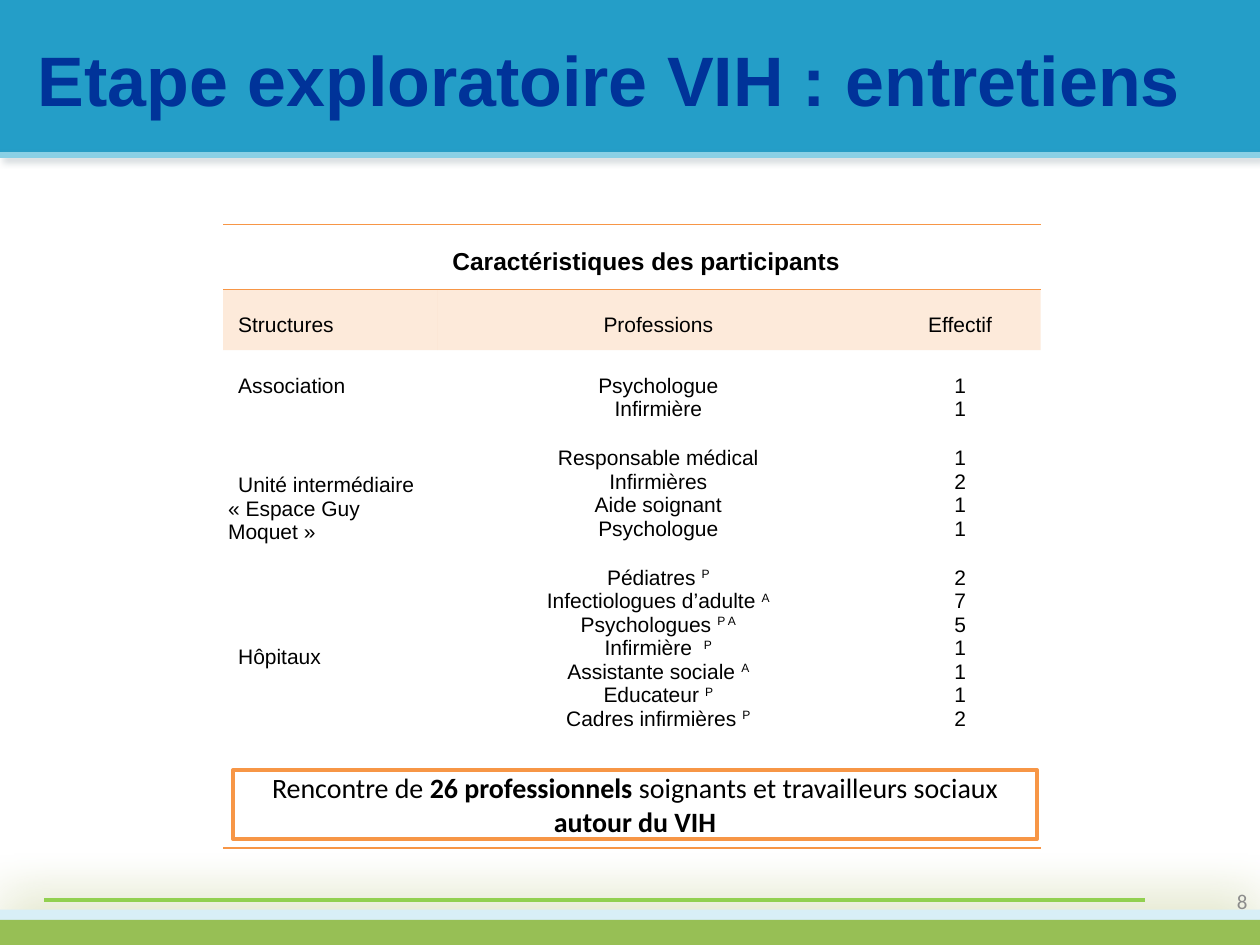
from lxml import etree
from pptx import Presentation
from pptx.dml.color import RGBColor
from pptx.enum.shapes import MSO_CONNECTOR, MSO_SHAPE
from pptx.enum.text import MSO_ANCHOR, PP_ALIGN
from pptx.oxml.ns import qn
from pptx.util import Inches, Pt

RECTANGLE = MSO_SHAPE.RECTANGLE
STRAIGHT = MSO_CONNECTOR.STRAIGHT
MIDDLE = MSO_ANCHOR.MIDDLE
LEFT, CENTER, RIGHT = PP_ALIGN.LEFT, PP_ALIGN.CENTER, PP_ALIGN.RIGHT

BLACK = RGBColor(0x00, 0x00, 0x00)
WHITE = RGBColor(0xFF, 0xFF, 0xFF)
NAVY = RGBColor(0x00, 0x33, 0x99)
BLUE = RGBColor(0x24, 0x9E, 0xC8)
LIGHT_BLUE = RGBColor(0x8A, 0xD0, 0xE5)
PALE_BLUE = RGBColor(0xD8, 0xEF, 0xF7)
GREEN = RGBColor(0x97, 0xBF, 0x55)
BRIGHT_GREEN = RGBColor(0x92, 0xD0, 0x50)
ORANGE = RGBColor(0xF7, 0x96, 0x46)
GREY = RGBColor(0x8C, 0x8C, 0x8C)
GREY_SHADOW = RGBColor(0x82, 0x92, 0x9B)
OLIVE_SHADOW = RGBColor(0x88, 0x9B, 0x29)

NO_TABLE_STYLE = "{2D5ABB26-0587-4C30-8999-92F81FD0307C}"
GROUP_GAP = 14.5

# structure, space before it in points, (profession, superscript, headcount)
GROUPS = [
    ("Association", 0, [("Psychologue", "", 1), ("Infirmière", "", 1)]),
    ("Unité intermédiaire «\u00a0Espace Guy Moquet\u00a0»", 43.5, [
        ("Responsable médical", "", 1), ("Infirmières", "", 2),
        ("Aide soignant", "", 1), ("Psychologue", "", 1)]),
    ("Hôpitaux", 57.5, [
        ("Pédiatres ", "P", 2), ("Infectiologues d’adulte ", "A", 7),
        ("Psychologues ", "P A", 5), ("Infirmière  ", "P", 1),
        ("Assistante sociale ", "A", 1), ("Educateur ", "P", 1),
        ("Cadres infirmières ", "P", 2)]),
]


def set_effects(shape, color=None, alpha=0, blur=0, distance=0, angle=0):
    """Give the shape one outer shadow, or none when no colour is passed."""
    effects = etree.SubElement(shape._element.spPr, qn("a:effectLst"))
    if color is not None:
        shadow = etree.SubElement(
            effects, qn("a:outerShdw"), blurRad=str(Pt(blur)), dist=str(Pt(distance)),
            dir=str(angle * 60000), algn="ctr", rotWithShape="0")
        tint = etree.SubElement(shadow, qn("a:srgbClr"), val=str(color))
        etree.SubElement(tint, qn("a:alpha"), val=str(alpha * 1000))


def fill_cell(cell, lines, align=CENTER, size=12, bold=False):
    """Write lines of (text, superscript, space before) into a cell."""
    frame = cell.text_frame
    for index, (text, mark, gap) in enumerate(lines):
        para = frame.add_paragraph() if index else frame.paragraphs[0]
        para.alignment = align
        if gap:
            para.space_before = Pt(gap)
        properties = para._p.get_or_add_pPr()
        properties.set("marL", str(Inches(0.04)))
        properties.set("indent", str(Inches(0.08)))
        for part in filter(None, (text, mark)):
            span = para.add_run()
            span.text = part
            formats = {"name": "Arial", "size": Pt(size), "bold": bold}
            for name, value in formats.items():
                setattr(span.font, name, value)
            span.font.color.rgb = BLACK
        if mark:
            span._r.get_or_add_rPr().set("baseline", "30000")


deck = Presentation()
deck.slide_width, deck.slide_height = Inches(10), Inches(7.5)
page = deck.slides.add_slide(deck.slide_layouts[5])
shapes = page.shapes

# Header and footer bands
for top, height, color, shadow in [
    (0, 1.23, BLUE, ()),
    (7.22, 0.2, PALE_BLUE, (OLIVE_SHADOW, 47, 32, 3, 270)),
    (7.3, 0.2, GREEN, ()),
]:
    band = shapes.add_shape(RECTANGLE, 0, Inches(top), Inches(10), Inches(height))
    band.fill.solid()
    band.fill.fore_color.rgb = color
    band.line.fill.background()
    set_effects(band, *shadow)

for left, right, y, color, width, shadow in [
    (0, 10, 1.23, LIGHT_BLUE, 3.5, (GREY_SHADOW, 40, 4, 3, 45)),
    (0.35, 9.09, 7.14, BRIGHT_GREEN, 2.25, ()),
]:
    rule = shapes.add_connector(STRAIGHT, Inches(left), Inches(y), Inches(right), Inches(y))
    rule.line.color.rgb = color
    rule.line.width = Pt(width)
    set_effects(rule, *shadow)

# Title, brought in front of the header band
title = shapes.title
shapes._spTree.append(title._element)
title.left, title.top = Inches(0.2), Inches(0)
title.width, title.height = Inches(9.45), Inches(1.25)
title.text_frame.text = "Etape exploratoire VIH : entretiens"
title.text_frame.vertical_anchor = MIDDLE
para = title.text_frame.paragraphs[0]
para.alignment = LEFT
for name, value in {"name": "Arial", "size": Pt(40), "bold": True}.items():
    setattr(para.font, name, value)
para.font.color.rgb = NAVY

# Page number
number_box = shapes.add_textbox(Inches(7.67), Inches(6.95), Inches(2.33), Inches(0.4))
number_box.text_frame.word_wrap = True
number_box.text_frame.vertical_anchor = MIDDLE
para = number_box.text_frame.paragraphs[0]
para.text = "8"
para.alignment = RIGHT
para.font.name, para.font.size = "Calibri", Pt(12)
para.font.color.rgb = GREY

# Table of participants
table = shapes.add_table(
    3, 3, Inches(1.77), Inches(1.78), Inches(6.49), Inches(4.95)).table
table.first_row = table.horz_banding = False
table._tbl.tblPr.find(qn("a:tableStyleId")).text = NO_TABLE_STYLE
for column, width in zip(table.columns, (1.7, 3.39, 1.4)):
    column.width = Inches(width)
for row, height in zip(table.rows, (0.52, 0.48, 3.95)):
    row.height = Inches(height)
table.cell(0, 1).merge(table.cell(0, 2))

ROW_BORDERS = [("a:lnT", "a:lnB"), (), ("a:lnB",)]
for row, borders in zip(table.rows, ROW_BORDERS):
    for cell in row.cells:
        cell.margin_left = cell.margin_right = cell.margin_bottom = 0
        cell.margin_top = Inches(0.19)
        cell_properties = cell._tc.get_or_add_tcPr()
        for side in borders:
            border = etree.SubElement(cell_properties, qn(side), w=str(Pt(1)))
            paint = etree.SubElement(border, qn("a:solidFill"))
            etree.SubElement(paint, qn("a:srgbClr"), val=str(ORANGE))
        cell.fill.background()

for cell in table.rows[1].cells:
    cell.fill.solid()
    cell.fill.fore_color.rgb = ORANGE
    tint = cell._tc.tcPr.find(".//" + qn("a:srgbClr"))
    etree.SubElement(tint, qn("a:alpha"), val="20000")

structures, professions, counts = [], [], []
for structure, structure_gap, members in GROUPS:
    structures.append((structure, "", structure_gap))
    for index, (profession, mark, count) in enumerate(members):
        gap = GROUP_GAP if professions and index == 0 else 0
        professions.append((profession, mark, gap))
        counts.append((str(count), "", gap))

fill_cell(table.cell(0, 1), [("Caractéristiques des participants", "", 0)], LEFT, 14, True)
for index, (heading, lines) in enumerate([
    ("Structures", structures), ("Professions", professions), ("Effectif", counts),
]):
    align = CENTER if index else LEFT
    fill_cell(table.cell(1, index), [(heading, "", 0)], align)
    fill_cell(table.cell(2, index), lines, align)

# Summary box
summary = shapes.add_shape(RECTANGLE, Inches(1.85), Inches(6.11), Inches(6.38), Inches(0.55))
summary.shadow.inherit = False
summary.fill.solid()
summary.fill.fore_color.rgb = WHITE
summary.line.color.rgb = ORANGE
summary.line.width = Pt(2)
frame = summary.text_frame
frame.word_wrap = True
frame.vertical_anchor = MIDDLE
for index, spans in enumerate([
    [("Rencontre de ", False), ("26 professionnels ", True),
     ("soignants et travailleurs sociaux", False)],
    [("autour du VIH", True)],
]):
    para = frame.add_paragraph() if index else frame.paragraphs[0]
    para.alignment = CENTER
    for text, bold in spans:
        span = para.add_run()
        span.text = text
        for name, value in {"name": "Calibri", "size": Pt(16), "bold": bold}.items():
            setattr(span.font, name, value)
        span.font.color.rgb = BLACK

deck.save("out.pptx")
